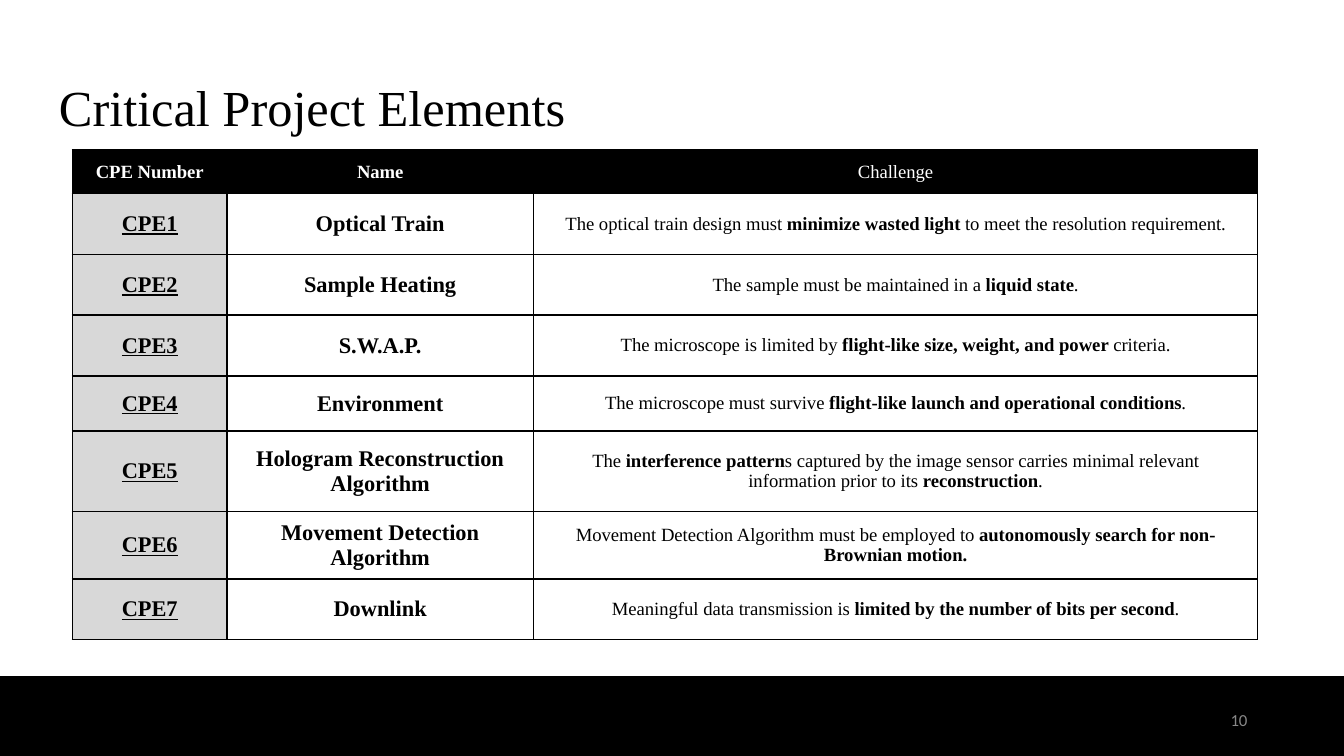
from lxml.etree import SubElement
from pptx import Presentation
from pptx.dml.color import RGBColor
from pptx.enum.shapes import MSO_SHAPE as Shape
from pptx.enum.text import MSO_ANCHOR as Anchor, PP_ALIGN as Align
from pptx.oxml.ns import qn
from pptx.util import Pt

TITLE = "Critical Project Elements"
PAGE_NUMBER = "10"
HEADINGS = ("CPE Number", "Name", "Challenge")
# (name, challenge, row height); ** marks bold passages
ELEMENTS = [
    ("Optical Train", "The optical train design must **minimize wasted light** "
     "to meet the resolution requirement.", 32.6),
    ("Sample Heating", "The sample must be maintained in a **liquid state**.", 32.6),
    ("S.W.A.P.", "The microscope is limited by "
     "**flight-like size, weight, and power** criteria.", 32.6),
    ("Environment", "The microscope must survive "
     "**flight-like launch and operational conditions**.", 29.4),
    ("Hologram Reconstruction Algorithm",
     "The **interference pattern**s captured by the image sensor carries minimal "
     "relevant information prior to its **reconstruction**.", 43.2),
    ("Movement Detection Algorithm", "Movement Detection Algorithm must be employed to "
     "**autonomously search for non-Brownian motion.**", 32.6),
    ("Downlink", "Meaningful data transmission is "
     "**limited by the number of bits per second**.", 32.6),
]
COLORS = {"ink": "000000", "paper": "FFFFFF", "label": "D8D8D8", "number": "888888"}
SERIF, SANS = "Times New Roman", "Calibri"
SLIDE_WIDTH, SLIDE_HEIGHT = 720, 405
FOOTER_TOP = 362.8
TABLE_LEFT, TABLE_TOP = 38.8, 80.5
COLUMN_WIDTHS = (82.8, 164.2, 388)
HEADER_HEIGHT = 23.2


def rgb(name):
    return RGBColor.from_string(COLORS[name])


def set_font(font, size, color, face=SERIF):
    font.name, font.size = face, Pt(size)
    font.color.rgb = rgb(color)


def add_text(slide, box, text, size, color, face, align, anchor):
    frame = slide.shapes.add_textbox(*map(Pt, box)).text_frame
    frame.word_wrap = True
    frame.vertical_anchor = anchor
    frame.margin_left = frame.margin_right = Pt(7.2)
    frame.margin_top = frame.margin_bottom = Pt(7.2)
    paragraph = frame.paragraphs[0]
    paragraph.text = text
    paragraph.alignment = align
    set_font(paragraph.font, size, color, face)
    return paragraph


def add_borders(cell):
    properties = cell._tc.get_or_add_tcPr()
    for side in ("lnL", "lnR", "lnT", "lnB"):
        line = SubElement(properties, qn(f"a:{side}"), w=str(Pt(1)))
        fill = SubElement(line, qn("a:solidFill"))
        SubElement(fill, qn("a:srgbClr"), val=COLORS["ink"])


def fill_cell(cell, text, size, color="ink", fill=None, bold=None, underline=None):
    """Write text into a cell; passages between ** are bold."""
    add_borders(cell)
    if fill:
        cell.fill.solid()
        cell.fill.fore_color.rgb = rgb(fill)
    else:
        cell.fill.background()
    cell.vertical_anchor = Anchor.MIDDLE
    paragraph = cell.text_frame.paragraphs[0]
    paragraph.alignment = Align.CENTER
    set_font(paragraph.font, size, color)
    paragraph.font.bold, paragraph.font.underline = bold, underline
    for index, passage in enumerate(text.split("**")):
        if passage:
            run = paragraph.add_run()
            run.text = passage
            if index % 2:
                run.font.bold = True


def add_elements_table(slide):
    heights = [HEADER_HEIGHT] + [height for *_, height in ELEMENTS]
    table = slide.shapes.add_table(
        len(heights), len(HEADINGS), Pt(TABLE_LEFT), Pt(TABLE_TOP),
        Pt(sum(COLUMN_WIDTHS)), Pt(sum(heights))).table
    table.first_row = table.horz_banding = False
    for column, width in zip(table.columns, COLUMN_WIDTHS):
        column.width = Pt(width)
    for row, height in zip(table.rows, heights):
        row.height = Pt(height)
    for column, heading in enumerate(HEADINGS):
        fill_cell(table.cell(0, column), heading, 10, "paper", "ink",
                  bold=heading != "Challenge")
    for row, (name, challenge, _) in enumerate(ELEMENTS, 1):
        fill_cell(table.cell(row, 0), f"CPE{row}", 12, fill="label",
                  bold=True, underline=True)
        fill_cell(table.cell(row, 1), name, 12, bold=True)
        fill_cell(table.cell(row, 2), challenge, 10, fill="paper", bold=False)


def main():
    deck = Presentation()
    deck.slide_width, deck.slide_height = Pt(SLIDE_WIDTH), Pt(SLIDE_HEIGHT)
    slide = deck.slides.add_slide(deck.slide_layouts[6])

    footer = slide.shapes.add_shape(
        Shape.RECTANGLE, 0, Pt(FOOTER_TOP), Pt(SLIDE_WIDTH), Pt(SLIDE_HEIGHT - FOOTER_TOP))
    footer.shadow.inherit = False
    footer.fill.solid()
    footer.fill.fore_color.rgb = footer.line.color.rgb = rgb("ink")
    footer.line.width = Pt(1)

    title = add_text(slide, (24.5, 35.3, 671, 45.4), TITLE, 27, "ink", SERIF,
                     Align.LEFT, Anchor.BOTTOM)
    title.line_spacing = 0.9
    add_text(slide, (632.2, 370, 43.2, 31), PAGE_NUMBER, 9, "number", SANS,
             Align.RIGHT, Anchor.MIDDLE)
    add_elements_table(slide)
    deck.save("out.pptx")


if __name__ == "__main__":
    main()
